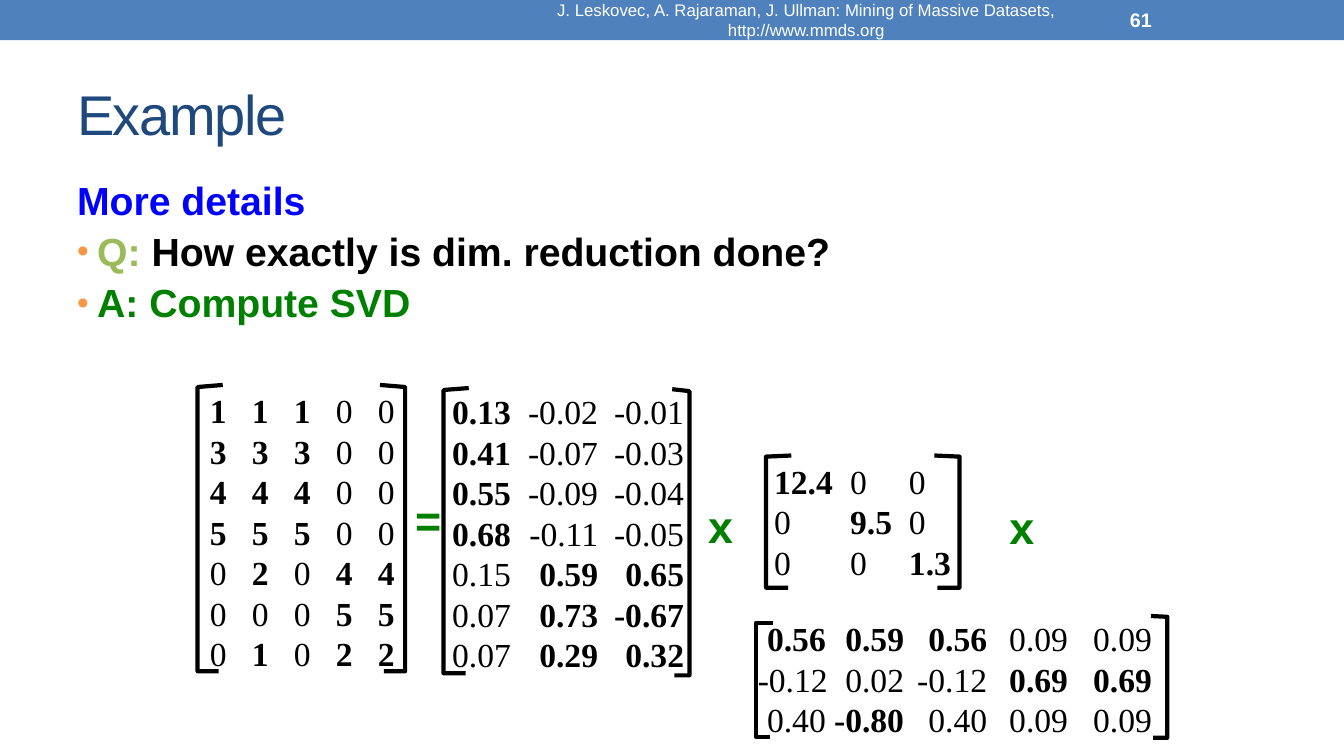
from lxml.etree import SubElement
from pptx import Presentation
from pptx.dml.color import RGBColor
from pptx.enum.shapes import MSO_SHAPE
from pptx.enum.text import MSO_ANCHOR as Anchor, PP_ALIGN as Align
from pptx.oxml.ns import qn
from pptx.util import Pt

COLORS = {
    "band": "4F81BD",
    "title": "1F497D",
    "heading": "0000FF",
    "question": "9BBB59",
    "answer": "008000",
    "bullet": "F79646",
    "ink": "000000",
    "light": "FFFFFF",
}

RATINGS = [
    "*1 *1 *1 0 0",
    "*3 *3 *3 0 0",
    "*4 *4 *4 0 0",
    "*5 *5 *5 0 0",
    "0 *2 0 *4 *4",
    "0 0 0 *5 *5",
    "0 *1 0 *2 *2",
]
USER_CONCEPTS = [
    "*0.13 -0.02 -0.01",
    "*0.41 -0.07 -0.03",
    "*0.55 -0.09 -0.04",
    "*0.68 -0.11 -0.05",
    "0.15 *0.59 *0.65",
    "0.07 *0.73 *-0.67",
    "0.07 *0.29 *0.32",
]
STRENGTHS = ["*12.4 0 0", "0 *9.5 0", "0 0 *1.3"]
MOVIE_CONCEPTS = [
    "*0.56 *0.59 *0.56 0.09 0.09",
    "-0.12 0.02 -0.12 *0.69 *0.69",
    "0.40 *-0.80 0.40 0.09 0.09",
]


def color(name):
    return RGBColor.from_string(COLORS[name])


def style(run, size, ink, bold=False, face="Arial"):
    run.font.name = face
    run.font.size = Pt(size)
    run.font.bold = bold
    run.font.color.rgb = color(ink)


def add_frame(slide, left, top, width, height, anchor=Anchor.TOP, wrap=True):
    box = slide.shapes.add_textbox(Pt(left), Pt(top), Pt(width), Pt(height))
    frame = box.text_frame
    frame.word_wrap = wrap
    frame.vertical_anchor = anchor
    return frame


def add_label(slide, text, area, size, ink, bold=False, align=Align.LEFT, wrap=True):
    frame = add_frame(slide, *area, anchor=Anchor.MIDDLE, wrap=wrap)
    frame.text = text
    line = frame.paragraphs[0]
    line.alignment = align
    style(line.runs[0], size, ink, bold)
    return line.runs[0]


def add_band(slide, width):
    band = slide.shapes.add_shape(MSO_SHAPE.RECTANGLE, 0, 0, width, Pt(28.8))
    band.shadow.inherit = False
    band.fill.solid()
    band.fill.fore_color.rgb = color("band")
    band.line.fill.background()


def set_bullet(properties):
    tint = SubElement(properties, qn("a:buClr"))
    SubElement(tint, qn("a:srgbClr"), val=COLORS["bullet"])
    SubElement(properties, qn("a:buSzPct"), val="85000")
    SubElement(properties, qn("a:buFont"), typeface="Arial")
    SubElement(properties, qn("a:buChar"), char="•")


def add_discussion(slide, points):
    frame = add_frame(slide, 48, 126, 864, 384)
    for index, (bulleted, pieces) in enumerate(points):
        line = frame.add_paragraph() if index else frame.paragraphs[0]
        line.line_spacing = 0.9
        line.space_before = Pt(6.4)
        properties = line._p.get_or_add_pPr()
        properties.set("marL", str(Pt(14.4)))
        properties.set("indent", str(-Pt(14.4)))
        if bulleted:
            set_bullet(properties)
        for text, ink in pieces:
            run = line.add_run()
            run.text = text
            style(run, 28, ink, bold=True)


def add_matrix(slide, rows, area, inset, stops, side="l", lead=""):
    frame = add_frame(slide, *area)
    frame.margin_left = Pt(inset)
    for index, row in enumerate(rows):
        line = frame.add_paragraph() if index else frame.paragraphs[0]
        line.line_spacing = Pt(28.9)
        tabs = SubElement(line._p.get_or_add_pPr(), qn("a:tabLst"))
        for stop in stops:
            SubElement(tabs, qn("a:tab"), pos=str(Pt(stop)), algn=side)
        for column, value in enumerate(row.split()):
            run = line.add_run()
            run.text = ("\t" if column else lead) + value.lstrip("*")
            style(run, 24, "ink", value.startswith("*"), "Times New Roman")


def add_bracket(slide, tip, back, foot, top, corner, bottom):
    pen = slide.shapes.build_freeform(Pt(tip), Pt(top), scale=1.0)
    corners = [(back, corner), (back, bottom), (foot, bottom)]
    pen.add_line_segments([(Pt(x), Pt(y)) for x, y in corners], close=False)
    bracket = pen.convert_to_shape()
    bracket.shadow.inherit = False
    bracket.fill.background()
    bracket.line.color.rgb = color("ink")
    bracket.line.width = Pt(3)


def main():
    deck = Presentation()
    deck.slide_width, deck.slide_height = Pt(960), Pt(540)
    slide = deck.slides.add_slide(deck.slide_layouts[6])

    add_band(slide, deck.slide_width)
    title = add_label(slide, "Example", (48, 41.8, 864, 77.8), 40, "title")
    title._r.get_or_add_rPr().set("spc", "-100")
    add_discussion(slide, [
        (False, [("More details", "heading")]),
        (True, [("Q:", "question"), (" How exactly is dim. reduction done?", "ink")]),
        (True, [("A: Compute SVD", "answer")]),
    ])
    citation = ("J. Leskovec, A. Rajaraman, J. Ullman: Mining of Massive Datasets, "
                "http://www.mmds.org")
    add_label(slide, citation, (360, 1.4, 432, 26), 12, "light", align=Align.CENTER)
    add_label(slide, "61", (800, 1.4, 112, 26), 14, "light", bold=True)

    for bracket in [
        (159.1, 141.1, 156.2, 275, 276.5, 479.5),
        (271.4, 289.4, 274.3, 275, 276.5, 479.5),
        (334.8, 316.8, 332.6, 277.2, 278.6, 481),
        (480.2, 492.5, 481.7, 278, 279.4, 482.4),
        (565.2, 547.2, 563, 325.4, 326.2, 419.8),
        (667.4, 685.4, 669.6, 325.4, 326.2, 419.8),
        (552.2, 540, 550.1, 445, 445, 526.3),
        (822.2, 833.8, 823.7, 440, 440.6, 527),
    ]:
        add_bracket(slide, *bracket)

    for sign, left, top in [("=", 289.4, 347.8), ("x", 498.2, 352.1), ("x", 713.5, 352.8)]:
        add_label(slide, sign, (left, top, 33, 46), 32, "answer", bold=True,
                  align=Align.CENTER, wrap=False)

    add_matrix(slide, RATINGS, (138.2, 275, 156.2, 211), 11.8,
               [30 * column for column in range(1, 5)])
    add_matrix(slide, USER_CONCEPTS, (306.7, 275.8, 198, 211), 16.2,
               [104.3, 165.7], side="r")
    add_matrix(slide, STRENGTHS, (545.8, 325.4, 156.2, 94.3), 7.2, [54.3, 96.4])
    add_matrix(slide, MOVIE_CONCEPTS, (534.2, 437.8, 306, 94.3), 7.2,
               [48.6, 104.5, 163.9, 221.6, 281.6], side="r", lead="\t")

    deck.save("out.pptx")


if __name__ == "__main__":
    main()
